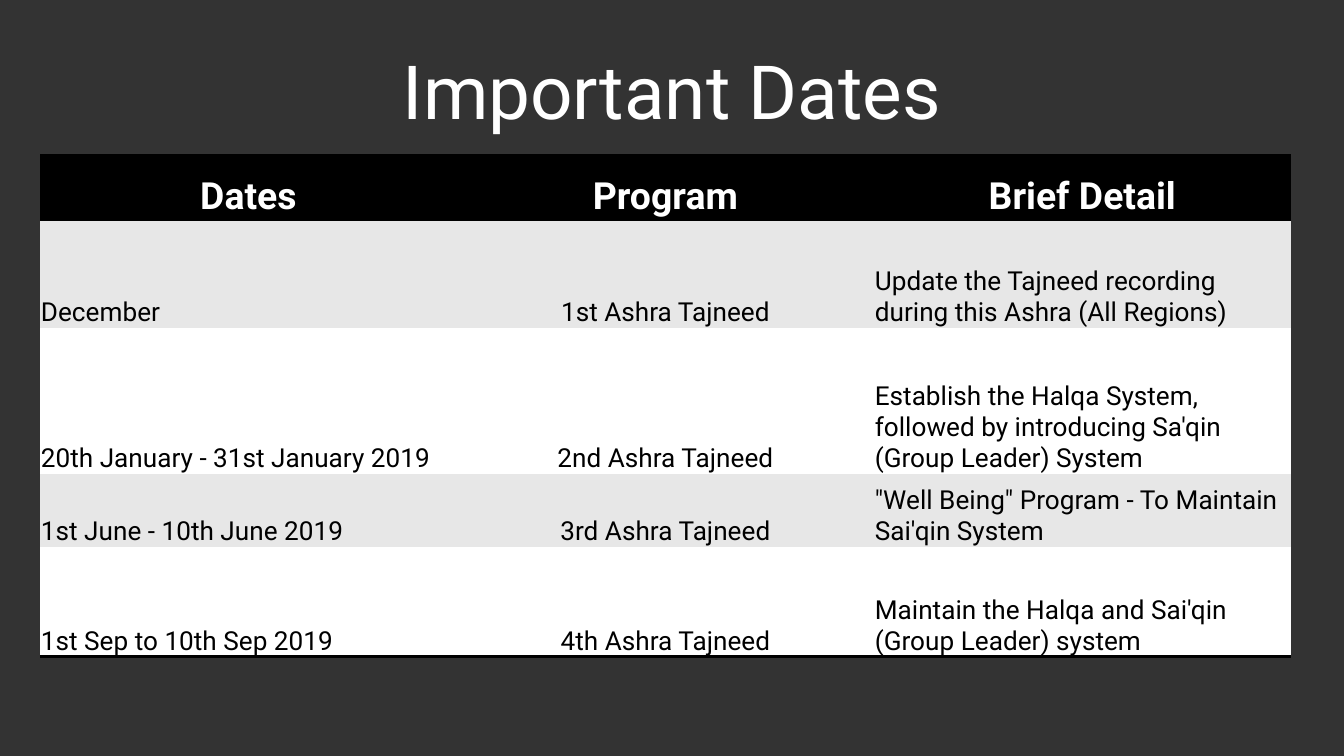
from typing import NamedTuple

from lxml.etree import SubElement
from pptx import Presentation
from pptx.dml.color import RGBColor
from pptx.enum.text import MSO_ANCHOR, PP_ALIGN
from pptx.oxml.ns import qn
from pptx.util import Emu, Pt

FONT = "Roboto"
BLACK, WHITE, GREY, CHARCOAL = "000000", "FFFFFF", "E7E7E7", "333333"
NO_GRID_STYLE = "{2D5ABB26-0587-4C30-8999-92F81FD0307C}"


class Event(NamedTuple):
    dates: str
    program: str
    detail: str
    height: int


HEADINGS = Event("Dates", "Program", "Brief Detail", 63)
EVENTS = [
    Event("December", "1st Ashra Tajneed",
          "Update the Tajneed recording during this Ashra (All Regions)", 109),
    Event("20th January - 31st January 2019", "2nd Ashra Tajneed",
          "Establish the Halqa System, followed by introducing Sa'qin (Group Leader) System", 146),
    Event("1st June - 10th June 2019", "3rd Ashra Tajneed",
          "\"Well Being\" Program - To Maintain Sai'qin System", 73),
    Event("1st Sep to 10th Sep 2019", "4th Ashra Tajneed",
          "Maintain the Halqa and Sai'qin (Group Leader) system", 110),
]


def px(length: int) -> Emu:
    return Emu(round(length * 914400 / 134.4))


def color(value: str) -> RGBColor:
    return RGBColor.from_string(value)


def write(frame, text: str, *, size: int, fill: str = BLACK, bold: bool = False,
          align: PP_ALIGN = PP_ALIGN.LEFT, spacing: float = 1.0) -> None:
    paragraph = frame.paragraphs[0]
    paragraph.alignment = align
    paragraph.line_spacing = spacing
    run = paragraph.add_run()
    run.text = text
    run.font.name = FONT
    run.font.size = Pt(size)
    run.font.bold = bold
    run.font.color.rgb = color(fill)


def add_border(cell, side: str) -> None:
    line = SubElement(cell._tc.get_or_add_tcPr(), qn(f"a:ln{side}"), w=str(Pt(2)))
    solid = SubElement(line, qn("a:solidFill"))
    SubElement(solid, qn("a:srgbClr"), val=BLACK)


def format_cell(cell, fill: str, borders: str) -> None:
    cell.margin_left = cell.margin_right = cell.margin_top = px(1)
    cell.margin_bottom = 0
    cell.vertical_anchor = MSO_ANCHOR.BOTTOM
    for side in borders:
        add_border(cell, side)
    cell.fill.solid()
    cell.fill.fore_color.rgb = color(fill)


def add_schedule(slide, left: int, top: int, column_width: int) -> None:
    rows = [HEADINGS, *EVENTS]
    frame = slide.shapes.add_table(len(rows), 3, px(left), px(top), px(3 * column_width),
                                   px(sum(event.height for event in rows)))
    schedule = frame.table
    schedule.first_row = schedule.horz_banding = False
    schedule._tbl.tblPr.find(qn("a:tableStyleId")).text = NO_GRID_STYLE
    for column in schedule.columns:
        column.width = px(column_width)
    for index, event in enumerate(rows):
        schedule.rows[index].height = px(event.height)
        heading = index == 0
        last = index == len(rows) - 1
        fill = BLACK if heading else GREY if index % 2 else WHITE
        for position, text in enumerate(event[:3]):
            cell = schedule.cell(index, position)
            format_cell(cell, fill, "TB" if heading else "B" if last else "")
            centered = heading or position == 1
            write(cell.text_frame, text, size=20 if heading else 14,
                  fill=WHITE if heading else BLACK, bold=heading,
                  align=PP_ALIGN.CENTER if centered else PP_ALIGN.LEFT)


def main() -> None:
    presentation = Presentation()
    presentation.slide_width, presentation.slide_height = px(1344), px(756)
    slide = presentation.slides.add_slide(presentation.slide_layouts[5])
    slide.background.fill.solid()
    slide.background.fill.fore_color.rgb = color(CHARCOAL)

    title = slide.shapes.title
    title.left, title.top, title.width, title.height = px(67), px(30), px(1210), px(118)
    title.text_frame.vertical_anchor = MSO_ANCHOR.MIDDLE
    write(title.text_frame, "Important Dates", size=40, fill=WHITE,
          align=PP_ALIGN.CENTER, spacing=1.02)

    add_schedule(slide, 40, 156, 417)
    presentation.save("out.pptx")


if __name__ == "__main__":
    main()
